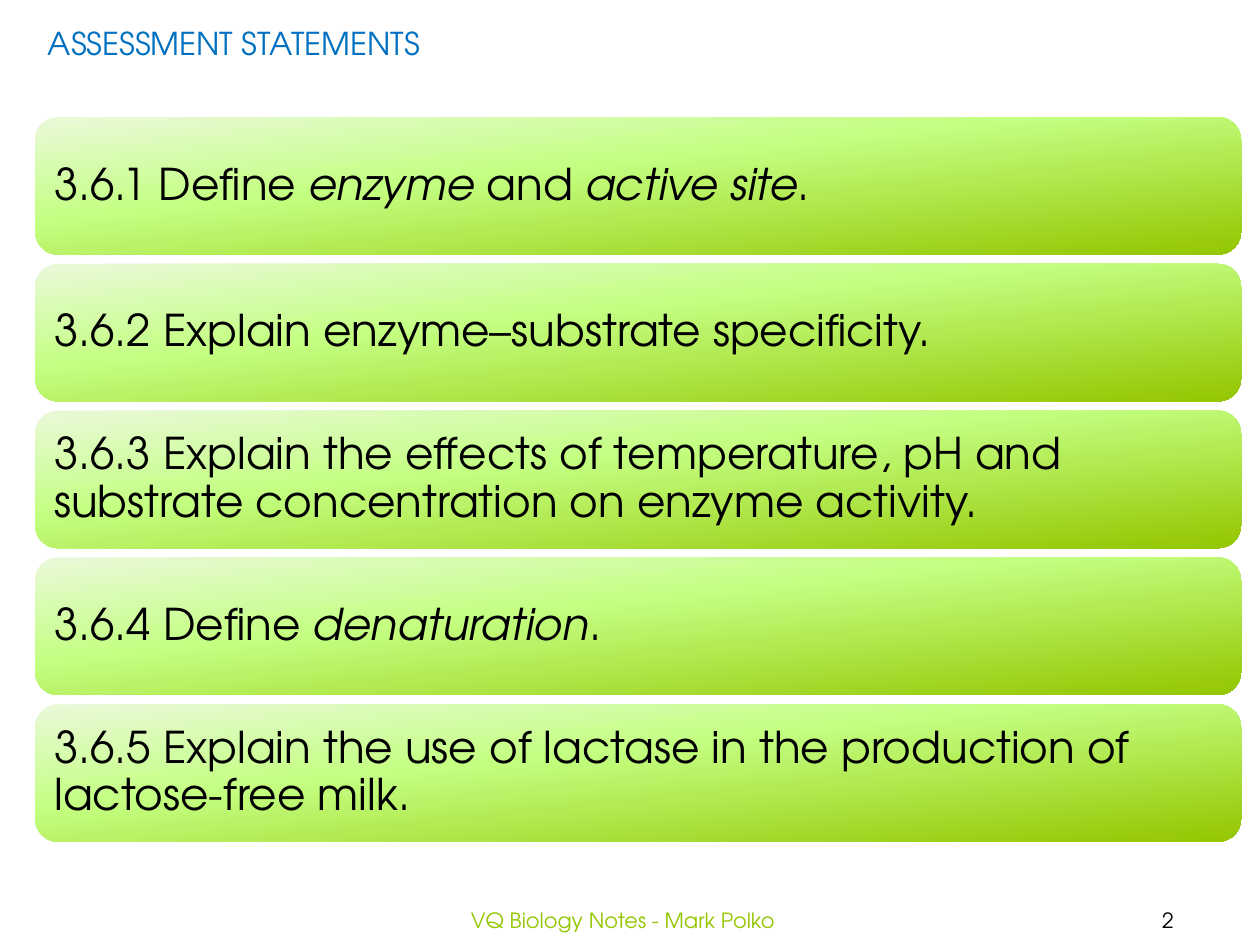
from copy import deepcopy
from pptx import Presentation
from pptx.dml.color import RGBColor
from pptx.enum.shapes import MSO_SHAPE
from pptx.enum.text import MSO_ANCHOR, MSO_AUTO_SIZE, PP_ALIGN
from pptx.util import Inches, Pt

FONT = "TeX Gyre Adventor"
BLACK = RGBColor(0x00, 0x00, 0x00)
BLUE = RGBColor(0x00, 0x70, 0xC0)
GREEN = RGBColor(0x94, 0xC6, 0x00)
BRIGHT = RGBColor(0xC4, 0xFF, 0x82)
PALE = RGBColor(0xEA, 0xF9, 0xDA)
GRADIENT = [(0, PALE), (0.4, BRIGHT), (1, GREEN)]

STATEMENTS = [
    [("3.6.1 Define ", False), ("enzyme ", True), ("and ", False),
     ("active site", True), (".", False)],
    [("3.6.2 Explain enzyme–substrate specificity.", False)],
    [("3.6.3 Explain the effects of temperature, pH and substrate "
      "concentration on enzyme activity.", False)],
    [("3.6.4 Define ", False), ("denaturation", True), (".", False)],
    [("3.6.5 Explain the use of lactase in the production of "
      "lactose-free milk.", False)],
]


def add_run(p, text, size, color, italic=False):
    r = p.add_run()
    r.text = text
    r.font.name = FONT
    r.font.size = Pt(size)
    r.font.color.rgb = color
    r.font.italic = italic


def fill_gradient(sp):
    sp.fill.gradient()
    sp.fill.gradient_angle = 360 - 84
    gs_list = sp.fill._fill._gradFill.gsLst
    gs_list.append(deepcopy(gs_list[0]))
    for stop, (position, color) in zip(sp.fill.gradient_stops, GRADIENT):
        stop.position = position
        stop.color.rgb = color


prs = Presentation()
prs.slide_width = Inches(10)
prs.slide_height = Inches(7.5)
s = prs.slides.add_slide(prs.slide_layouts[5])

title = s.shapes.title
title.left, title.top = Inches(0.28), Inches(0.14)
title.width, title.height = Inches(3.21), Inches(0.71)
tf = title.text_frame
tf.auto_size = MSO_AUTO_SIZE.NONE
tf.word_wrap = False
tf.vertical_anchor = MSO_ANCHOR.TOP
p = tf.paragraphs[0]
p.alignment = PP_ALIGN.LEFT
add_run(p, "ASSESSMENT STATEMENTS", 18, BLUE)

for i, runs in enumerate(STATEMENTS):
    sp = s.shapes.add_shape(MSO_SHAPE.ROUNDED_RECTANGLE, Inches(0.28),
                            Inches(0.93 + i * 4.66 / 4), Inches(9.57), Inches(1.09))
    sp.shadow.inherit = False
    sp.line.fill.background()
    fill_gradient(sp)
    tf = sp.text_frame
    tf.word_wrap = True
    tf.vertical_anchor = MSO_ANCHOR.MIDDLE
    tf.margin_left = tf.margin_right = Inches(0.1)
    tf.margin_top = tf.margin_bottom = Inches(0.1)
    p = tf.paragraphs[0]
    p.alignment = PP_ALIGN.LEFT
    p.line_spacing = 0.9
    for text, italic in runs:
        add_run(p, text, 25, BLACK, italic)

for text, left, width, color in [
    ("VQ Biology Notes - Mark Polko", 3.03, 3.83, GREEN),
    ("2", 8.54, 1.46, BLACK),
]:
    sp = s.shapes.add_textbox(Inches(left), Inches(7.1), Inches(width), Inches(0.4))
    tf = sp.text_frame
    tf.word_wrap = True
    tf.vertical_anchor = MSO_ANCHOR.MIDDLE
    p = tf.paragraphs[0]
    p.alignment = PP_ALIGN.CENTER
    add_run(p, text, 12, color)

prs.save("out.pptx")
